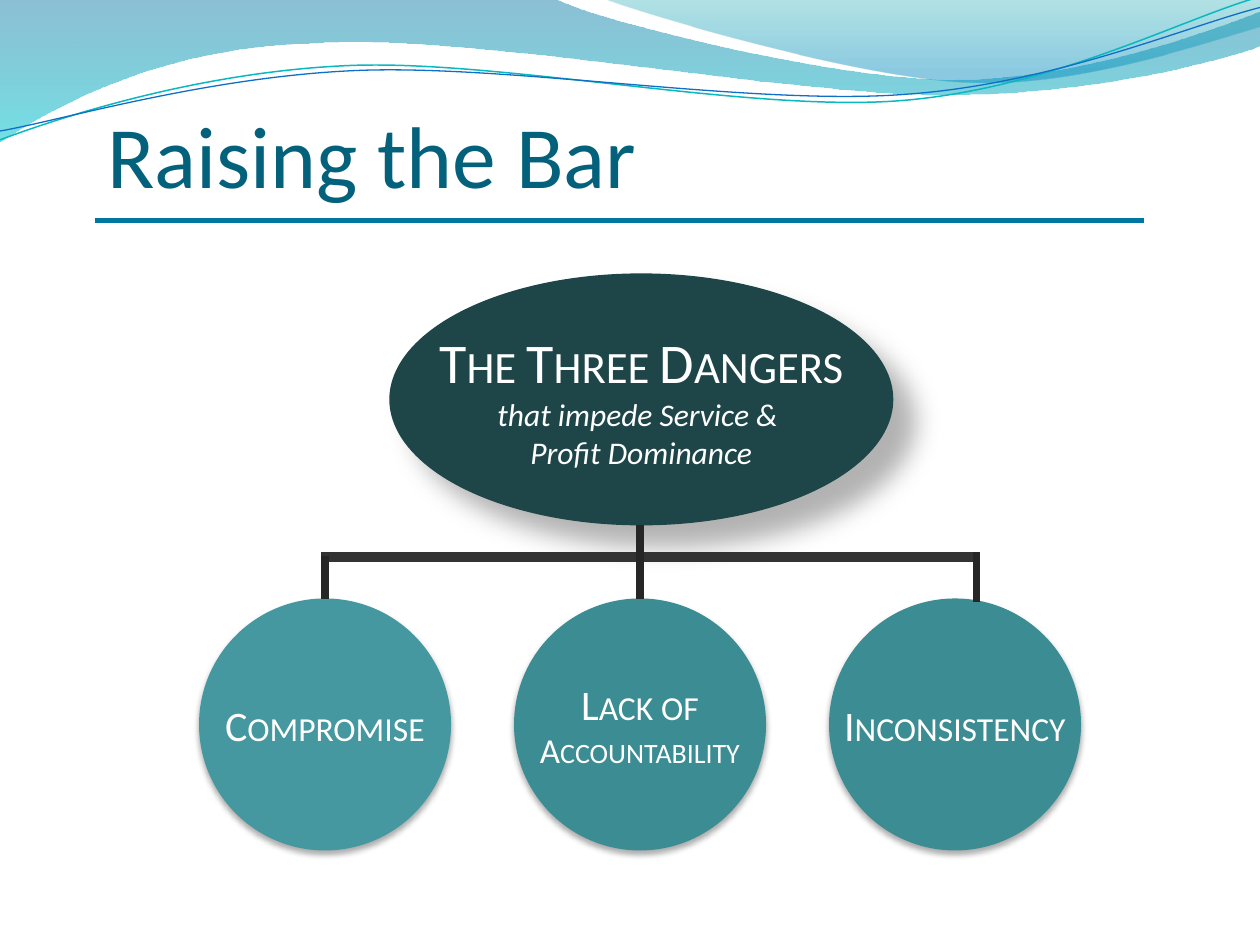
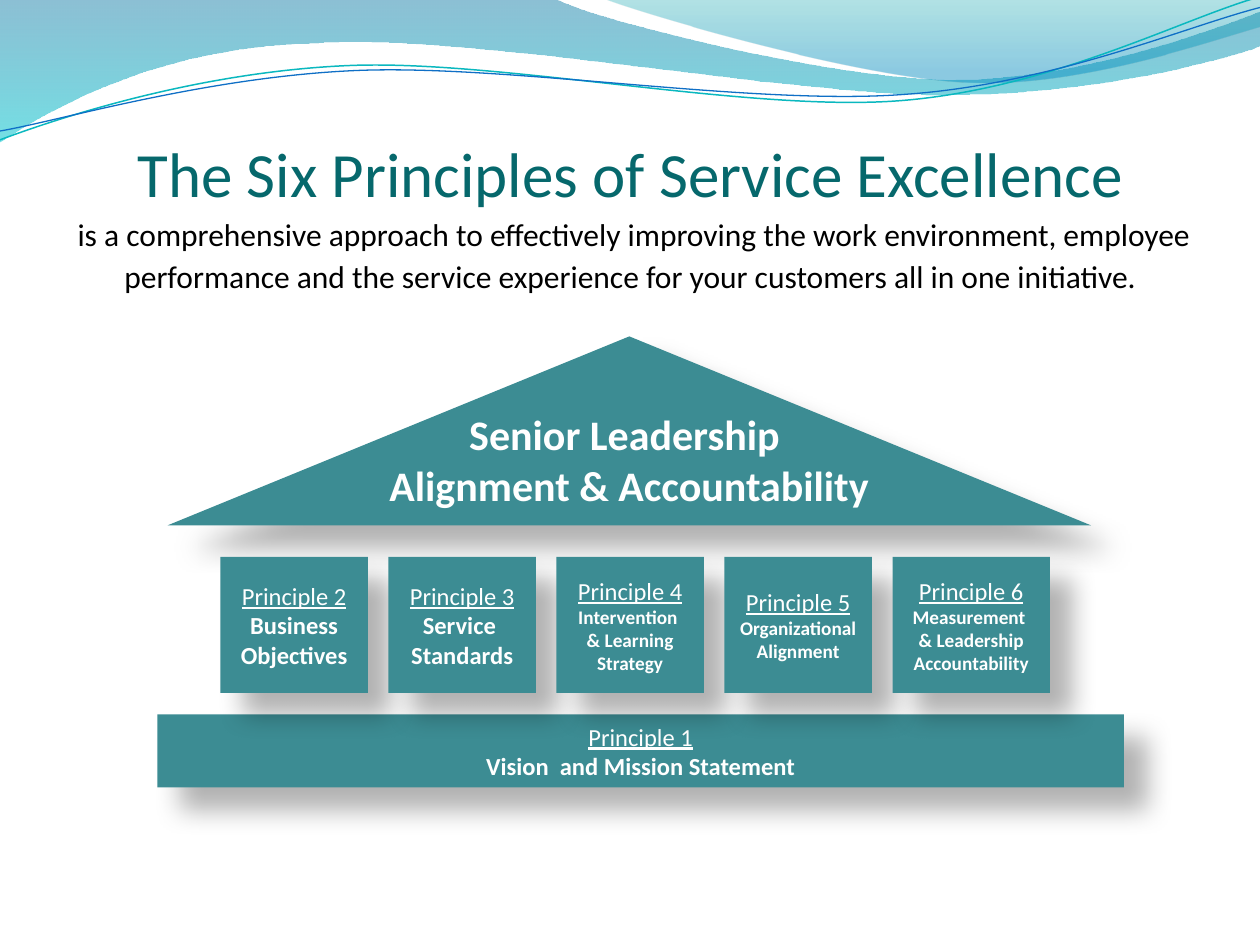
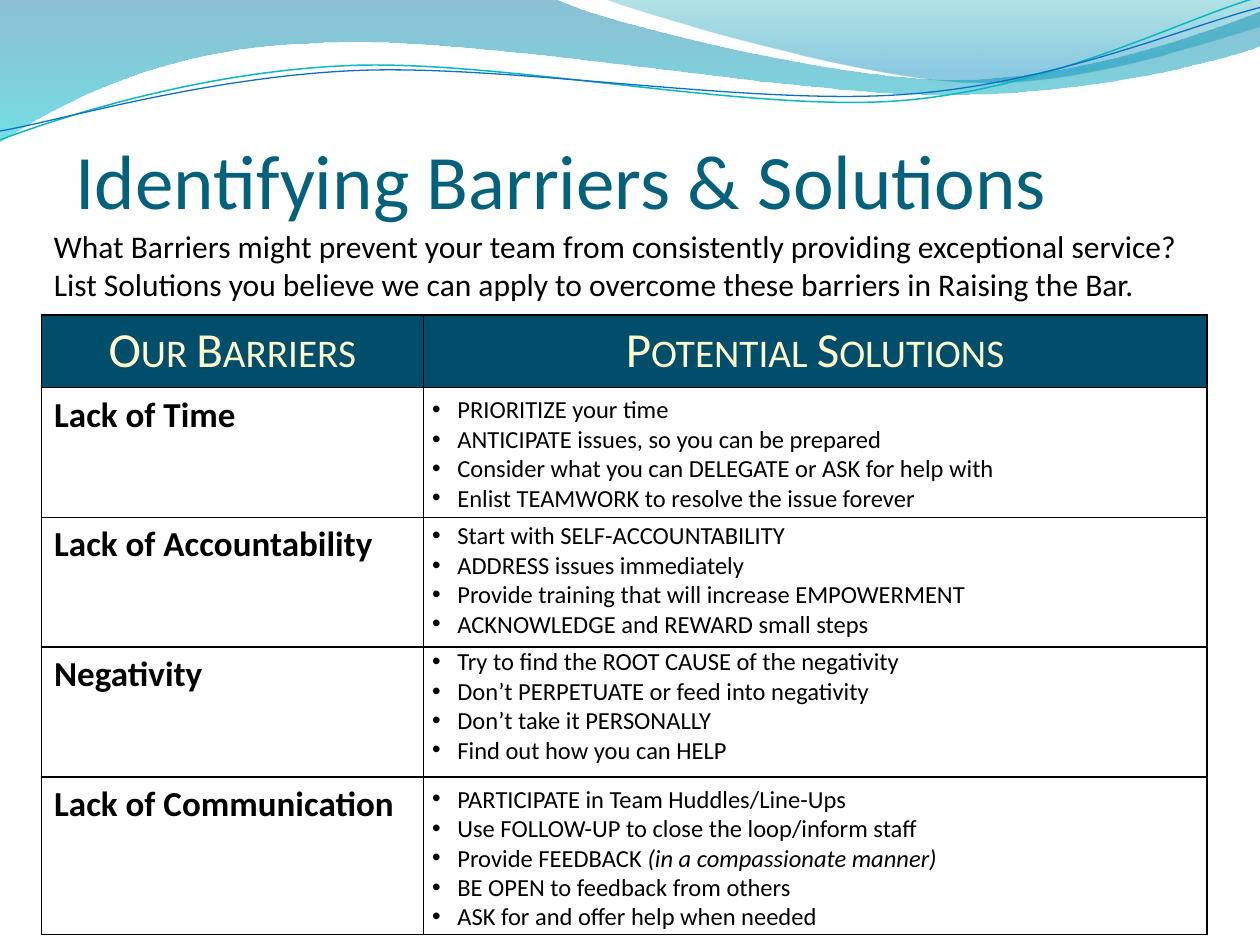
from dataclasses import dataclass
from math import cos, radians, sin

from pptx import Presentation
from pptx.dml.color import RGBColor
from pptx.enum.shapes import MSO_CONNECTOR, MSO_SHAPE
from pptx.enum.text import MSO_ANCHOR, MSO_AUTO_SIZE, PP_ALIGN
from pptx.oxml.ns import qn
from pptx.oxml.xmlchemy import OxmlElement
from pptx.util import Inches, Pt

LEFT, CENTER = PP_ALIGN.LEFT, PP_ALIGN.CENTER
TOP, MIDDLE = MSO_ANCHOR.TOP, MSO_ANCHOR.MIDDLE
NO_FIT = MSO_AUTO_SIZE.NONE
OVAL, RECT = MSO_SHAPE.OVAL, MSO_SHAPE.RECTANGLE
TRIANGLE = MSO_SHAPE.ISOSCELES_TRIANGLE
STRAIGHT = MSO_CONNECTOR.STRAIGHT
TITLE_ONLY, COMPARISON = 5, 4
WAVE_TILT = -2.7


@dataclass(frozen=True)
class Theme:
    font: str = "Calibri"
    title: str = "04617B"
    title_green: str = "06686C"
    text: str = "000000"
    white: str = "FFFFFF"
    dark: str = "1E4649"
    teal: str = "3C8C93"
    teal_light: str = "4597A0"
    rule: str = "0076A3"
    bar: str = "333333"
    stem: str = "262626"
    head_fill: str = "004E6C"
    head_text: str = "FFFFCC"
    deep_shadow: tuple = (30, 15, 18, 45)
    soft_shadow: tuple = (32, 3.5, 2.2, 90)
    title_size: int = 50
    table_title_size: int = 44
    house_title_size: int = 36
    hero_size: int = 32
    head_size: int = 28
    large: int = 24
    medium: int = 20
    body: int = 18
    small: int = 14
    tiny: int = 11


THEME = Theme()

WAVES = [
    dict(start=(0, 0),
         parts=[(4.4, -0.01), (4.76, 0.17, 6.64, 0.63, 7.58, 0.63),
                (8.53, 0.63, 9.58, 0.26, 10, 0.09), (10.01, 0.36),
                (9.83, 0.44, 8.7, 0.76, 7.46, 0.75),
                (6.22, 0.75, 3.82, 0.28, 2.57, 0.34),
                (1.29, 0.36, 0.46, 0.83, -0.01, 1.13)],
         stops=[(0, "0074A1", 45), (1, "00C6CF", 55)]),
    dict(start=(4.79, -0.01),
         parts=[(5.09, 0.11, 6.82, 0.62, 7.69, 0.65),
                (8.56, 0.69, 9.61, 0.32, 10, 0.21), (10, 0)],
         stops=[(0, "00A1A9", 30), (0.8, "008BBF", 45)]),
    dict(start=(0, 1.11),
         parts=[(0.48, 0.93, 1.58, 0.57, 2.77, 0.52),
                (3.95, 0.47, 5.93, 0.89, 7.13, 0.8),
                (8.33, 0.71, 9.38, 0.15, 9.98, -0.02)],
         line=("0AB8BF", 0.85), center=(4.99, 0.58)),
    dict(start=(0, 1.04),
         parts=[(0.47, 0.96, 1.64, 0.61, 2.83, 0.56),
                (4.03, 0.51, 5.97, 0.84, 7.17, 0.75),
                (8.36, 0.67, 9.41, 0.21, 10, 0.06)],
         line=("0F6FC6", 0.75), center=(5, 0.59)),
]

PRINCIPLES = [
    ("Principle 2", ["Business", "Objectives"], 1.17),
    ("Principle 3", ["Service ", "Standards"], 1.17),
    ("Principle 4", ["Intervention ", "& Learning", "Strategy"], 1.17),
    ("Principle 5", ["Organizational", "Alignment"], 1.17),
    ("Principle 6", ["Measurement ", "& Leadership", "Accountability"], 1.25),
]

BARRIERS = [
    ("Lack of Time", 3.08, 4.7,
     ["PRIORITIZE your time",
      "ANTICIPATE issues, so you can be prepared",
      "Consider what you can DELEGATE or ASK for help with",
      "Enlist TEAMWORK to resolve the issue forever"]),
    ("Lack of Accountability", 4.08, 4.48,
     ["Start with SELF-ACCOUNTABILITY",
      "ADDRESS issues immediately",
      "Provide training that will increase EMPOWERMENT",
      "ACKNOWLEDGE and REWARD small steps"]),
    ("Negativity", 5.08, 3.95,
     ["Try to find the ROOT CAUSE of the negativity",
      "Don’t PERPETUATE or feed into negativity",
      "Don’t take it PERSONALLY",
      "Find out how you can HELP"]),
    ("Lack of Communication", 6.17, 4.25,
     ["PARTICIPATE in Team Huddles/Line-Ups",
      "Use FOLLOW-UP to close the loop/inform staff",
      ("Provide FEEDBACK ", "(in a compassionate manner)"),
      "BE OPEN to feedback from others",
      "ASK for and offer help when needed"]),
]


def rgb(color):
    return RGBColor.from_string(color)


def add_child(parent, tag, **attrs):
    child = OxmlElement(tag)
    for name, value in attrs.items():
        child.set(name, str(value))
    parent.append(child)
    return child


def add_text(tf, text, size=THEME.body, color=THEME.text, font=THEME.font,
             bold=False, italic=False, underline=False, small_caps=False,
             align=LEFT, spacing=1.0, same_line=False):
    p = tf.paragraphs[-1]
    if p.runs and not same_line:
        p = tf.add_paragraph()
    p.alignment, p.line_spacing = align, spacing
    p.space_before = p.space_after = Pt(0)
    r = p.add_run()
    r.text = text
    r.font.name, r.font.size = font, Pt(size)
    r.font.color.rgb = rgb(color)
    r.font.bold, r.font.italic, r.font.underline = bold, italic, underline
    if small_caps:
        r.font._element.set("cap", "small")
    return p


def turn(point, center, degrees):
    dx, dy = point[0] - center[0], point[1] - center[1]
    c, s = cos(radians(degrees)), sin(radians(degrees))
    return center[0] + c * dx - s * dy, center[1] + s * dx + c * dy


def bend(sp, parts):
    segments = iter(list(sp.element.iter(qn("a:lnTo"))))
    for part in parts:
        first = next(segments)
        if len(part) == 6:
            curve = OxmlElement("a:cubicBezTo")
            first.addprevious(curve)
            for segment in (first, next(segments), next(segments)):
                curve.append(segment[0])
                segment.getparent().remove(segment)


class Deck:
    def __init__(self, theme):
        self.theme = theme
        self.prs = Presentation()
        self.prs.slide_width, self.prs.slide_height = Inches(10), Inches(7.5)
        self.slide = None

    def new_slide(self, layout):
        self.slide = self.prs.slides.add_slide(self.prs.slide_layouts[layout])

    def place(self, sp, left, top, width, height):
        sp.left, sp.top = Inches(left), Inches(top)
        sp.width, sp.height = Inches(width), Inches(height)

    def frame(self, sp, anchor=TOP, wrap=True):
        tf = sp.text_frame
        tf.auto_size, tf.vertical_anchor, tf.word_wrap = NO_FIT, anchor, wrap
        return tf

    def title(self, box, anchor=TOP):
        sp = self.slide.shapes.title
        self.place(sp, *box)
        return self.frame(sp, anchor)

    def textbox(self, *box):
        return self.frame(self.slide.shapes.add_textbox(*map(Inches, box)))

    def shape(self, kind, box, fill, shadow):
        sp = self.slide.shapes.add_shape(kind, *map(Inches, box))
        sp.fill.solid()
        sp.fill.fore_color.rgb = rgb(fill)
        sp.line.fill.background()
        sp.shadow.inherit = False
        alpha, blur, dist, angle = shadow
        effects = sp.element.spPr.find(qn("a:effectLst"))
        outer = add_child(effects, "a:outerShdw", blurRad=Pt(blur), dist=Pt(dist),
                          dir=angle * 60000, algn="ctr", rotWithShape=0)
        add_child(add_child(outer, "a:srgbClr", val=self.theme.text),
                  "a:alpha", val=alpha * 1000)
        return self.frame(sp, MIDDLE, wrap=False)

    def line(self, start, end, color, width):
        cn = self.slide.shapes.add_connector(STRAIGHT, *map(Inches, start + end))
        cn.line.color.rgb, cn.line.width = rgb(color), Pt(width)
        add_child(cn.element.spPr, "a:effectLst")

    def wave(self, start, parts, stops=None, line=None, center=None):
        points = [start]
        for part in parts:
            points += zip(part[::2], part[1::2])
        if center:
            points = [turn(point, center, -WAVE_TILT) for point in points]
        points = [(Inches(x), Inches(y)) for x, y in points]
        fb = self.slide.shapes.build_freeform(*points[0])
        fb.add_line_segments(points[1:], close=bool(stops))
        sp = fb.convert_to_shape()
        bend(sp, parts)
        sp.shadow.inherit = False
        if stops:
            sp.line.fill.background()
            sp.fill.gradient()
            sp.fill.gradient_angle = 270
            for gs, (position, color, alpha) in zip(sp.fill.gradient_stops, stops):
                gs.position, gs.color.rgb = position, rgb(color)
            for clr, stop in zip(list(sp.element.iter(qn("a:srgbClr"))), stops):
                add_child(clr, "a:alpha", val=stop[2] * 1000)
        else:
            sp.rotation = WAVE_TILT
            sp.fill.background()
            sp.line.color.rgb, sp.line.width = rgb(line[0]), Pt(line[1])
        return sp

    def master_waves(self):
        tree = self.prs.slide_master.shapes.element
        for i, wave in enumerate(WAVES):
            sp = self.wave(**wave)
            sp.element.nvSpPr.cNvPr.set("id", str(100 + i))
            tree.insert(2 + i, sp.element)

    def bullets(self, sp, items, box):
        self.place(sp, *box)
        tf = self.frame(sp, wrap=False)
        size = self.theme.small
        for item in items:
            text, *aside = (item,) if isinstance(item, str) else item
            p = add_text(tf, text, size)
            for extra in aside:
                add_text(tf, extra, size, italic=True, same_line=True)
            pPr = p._p.get_or_add_pPr()
            pPr.set("marL", str(Inches(0.2)))
            pPr.set("indent", str(Inches(-0.2)))
            add_child(pPr, "a:buFont", typeface="Arial")
            add_child(pPr, "a:buChar", char="•")

    def table(self, left, top, widths, heights):
        gf = self.slide.shapes.add_table(
            len(heights), len(widths), Inches(left), Inches(top),
            Inches(sum(widths)), Inches(sum(heights)))
        tbl = gf.table
        tbl.first_row = tbl.horz_banding = False
        for col, width in zip(tbl.columns, widths):
            col.width = Inches(width)
        for row, height in zip(tbl.rows, heights):
            row.height = Inches(height)
        for cell in tbl.iter_cells():
            tcPr = cell._tc.get_or_add_tcPr()
            for side in ("a:lnL", "a:lnR", "a:lnT", "a:lnB"):
                fill = add_child(add_child(tcPr, side, w=Pt(1)), "a:solidFill")
                add_child(fill, "a:srgbClr", val=self.theme.text)
            cell.fill.background()
        return tbl


def dangers_slide(deck):
    th = deck.theme
    add_text(deck.title((0.75, 0.75, 9, 1.25)), "Raising the Bar",
             th.title_size, th.title)
    tf = deck.shape(OVAL, (3.09, 2.17, 4, 2), th.dark, th.deep_shadow)
    add_text(tf, "The Three Dangers", th.hero_size, th.white,
             small_caps=True, align=CENTER)
    for text in ("that impede Service & ", "Profit Dominance"):
        add_text(tf, text, th.body, th.white, italic=True, align=CENTER)
    dangers = [
        (4.08, th.teal, [("Lack of", th.large), ("Accountability", th.medium)]),
        (6.58, th.teal, [("Inconsistency", th.large)]),
        (1.58, th.teal_light, [("Compromise", th.large)]),
    ]
    for left, fill, lines in dangers:
        tf = deck.shape(OVAL, (left, 4.75, 2, 2), fill, th.soft_shadow)
        for text, size in lines:
            add_text(tf, text, size, th.white, small_caps=True, align=CENTER)
    deck.line((2.55, 4.42), (7.75, 4.42), th.bar, 6)
    for x, top, bottom in ((5.08, 4.17, 4.75), (7.75, 4.38, 4.78), (2.58, 4.41, 4.75)):
        deck.line((x, top), (x, bottom), th.stem, 4.5)
    deck.line((0.75, 1.75), (9.08, 1.75), th.rule, 3)


def principle(deck, box, name, lines, size):
    th = deck.theme
    tf = deck.shape(RECT, box, th.teal, th.deep_shadow)
    add_text(tf, name, th.small, th.white, underline=True, align=CENTER)
    for text in lines:
        add_text(tf, text, size, th.white, bold=True, align=CENTER)


def principles_slide(deck):
    th = deck.theme
    tf = deck.title((0.42, 0.92, 9.17, 1.5), MIDDLE)
    add_text(tf, "The Six Principles of Service Excellence", th.house_title_size,
             th.title_green, align=CENTER, spacing=1.12)
    add_text(tf, " is a comprehensive approach to effectively improving the work "
             "environment, employee performance and the service experience for "
             "your customers all in one initiative.", th.body, th.text,
             align=CENTER, spacing=1.12)
    tf = deck.shape(TRIANGLE, (1.33, 2.67, 7.33, 1.5), th.teal, th.deep_shadow)
    tf.margin_bottom = Inches(0.35)
    for text in ("Senior Leadership ", "Alignment & Accountability"):
        add_text(tf, text, th.large, th.white, bold=True, align=CENTER)
    principle(deck, (1.25, 5.67, 7.67, 0.58), "Principle 1",
              ["Vision  and Mission Statement"], th.small)
    for i, (name, lines, width) in enumerate(PRINCIPLES):
        principle(deck, (1.75 + i * 4 / 3, 4.42, width, 1.08), name, lines,
                  th.small if i < 2 else th.tiny)


def barriers_slide(deck):
    th = deck.theme
    tf = deck.textbox(0.33, 1.75, 9.33, 0.71)
    for text in ("What Barriers might prevent your team from consistently "
                 "providing exceptional service?",
                 "List Solutions you believe we can apply to overcome these "
                 "barriers in Raising the Bar."):
        add_text(tf, text, th.body, th.text)
    add_text(deck.title((0.5, 1, 9, 0.92)), "Identifying Barriers & Solutions",
             th.table_title_size, th.title)
    tbl = deck.table(0.33, 2.5, [3.03, 6.22], [0.57, 1.03, 1.03, 1.03, 1.25])
    for col, text in enumerate(("Our Barriers", "Potential Solutions")):
        cell = tbl.cell(0, col)
        cell.fill.solid()
        cell.fill.fore_color.rgb = rgb(th.head_fill)
        add_text(cell.text_frame, text, th.head_size, th.head_text,
                 small_caps=True, align=CENTER)
    table_frame = deck.slide.shapes[-1].element
    bodies = list(deck.slide.placeholders)[1:]
    for row, (sp, barrier) in enumerate(zip(bodies, BARRIERS), 1):
        name, top, width, items = barrier
        add_text(tbl.cell(row, 0).text_frame, name, th.medium, th.text, bold=True)
        deck.bullets(sp, items, (3.33, top, width, 0.1 + 0.235 * len(items)))
    deck.slide.shapes.title.element.addnext(table_frame)


def main():
    deck = Deck(THEME)
    deck.new_slide(TITLE_ONLY)
    deck.master_waves()
    dangers_slide(deck)
    deck.new_slide(TITLE_ONLY)
    principles_slide(deck)
    deck.new_slide(COMPARISON)
    barriers_slide(deck)
    deck.prs.save("out.pptx")


if __name__ == "__main__":
    main()
